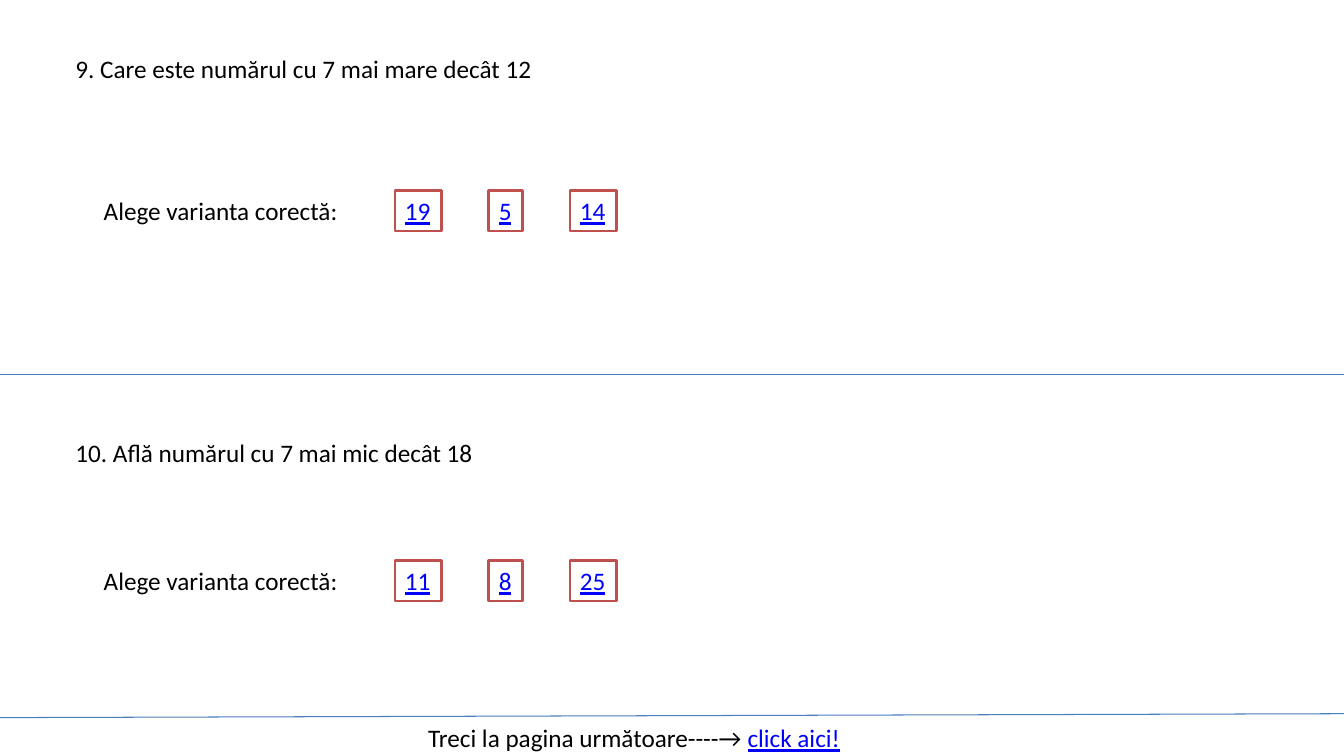
import pptx
import pptx.dml.color
import pptx.enum.shapes
import pptx.enum.text
import pptx.oxml.ns
import pptx.util
from lxml import etree

Pt = pptx.util.Pt
WIDTH, HEIGHT = 960, 540
LINE_HEIGHT = 29
BLACK, WHITE, BLUE, RED, RULE = "000000", "FFFFFF", "0000FF", "C0504D", "4B7EBC"


def color(hex_string):
    return pptx.dml.color.RGBColor.from_string(hex_string)


def write(shape, *runs):
    frame = shape.text_frame
    frame.word_wrap = False
    frame.auto_size = pptx.enum.text.MSO_AUTO_SIZE.SHAPE_TO_FIT_TEXT
    frame.vertical_anchor = pptx.enum.text.MSO_ANCHOR.TOP
    paragraph = frame.paragraphs[0]
    paragraph.alignment = pptx.enum.text.PP_ALIGN.LEFT
    for text, hex_string in runs:
        run = paragraph.add_run()
        run.text = text
        run.font.name = "Calibri"
        run.font.size = Pt(18)
        run.font.color.rgb = color(hex_string)
        run.font.underline = hex_string == BLUE


def add_label(slide, left, top, width, *runs):
    label = slide.shapes.add_textbox(Pt(left), Pt(top), Pt(width), Pt(LINE_HEIGHT))
    write(label, *runs)


def add_answer(slide, left, top, width, text):
    answer = slide.shapes.add_shape(
        pptx.enum.shapes.MSO_SHAPE.RECTANGLE, Pt(left), Pt(top), Pt(width), Pt(LINE_HEIGHT))
    answer.shadow.inherit = False
    answer.fill.solid()
    answer.fill.fore_color.rgb = color(WHITE)
    answer.line.color.rgb = color(RED)
    answer.line.width = Pt(2)
    write(answer, (text, BLUE))


def add_rule(slide, start, end):
    rule = slide.shapes.add_connector(
        pptx.enum.shapes.MSO_CONNECTOR.STRAIGHT, Pt(0), Pt(start), Pt(WIDTH), Pt(end))
    rule.line.color.rgb = color(RULE)
    rule.line.width = Pt(0.75)
    etree.SubElement(rule._element.spPr, pptx.oxml.ns.qn("a:effectLst"))


def add_question(slide, left, top, width, answers_offset, question, answers):
    add_label(slide, left, top, width, (question, BLACK))
    answers_top = top + answers_offset
    add_label(slide, left + 20.2, answers_top, 183.6, ("Alege varianta corectă:", BLACK))
    columns = ((235.4, 33.4), (302.4, 24), (360.4, 33.4))
    for (offset, answer_width), answer in zip(columns, answers):
        add_answer(slide, left + offset, answers_top, answer_width, answer)


def add_footer(slide, left, top, width):
    add_label(slide, left, top, width,
              ("Treci la pagina următoare----→ ", BLACK), ("click aici!", BLUE))


def main():
    presentation = pptx.Presentation()
    presentation.slide_width = Pt(WIDTH)
    presentation.slide_height = Pt(HEIGHT)
    slide = presentation.slides.add_slide(presentation.slide_layouts[6])
    add_rule(slide, 267.8, 267.8)
    add_rule(slide, 512.6, 509.8)
    add_question(slide, 46.8, 34.6, 344.2, 101.5,
                 "9. Care este numărul cu 7 mai mare decât 12", ("19", "5", "14"))
    add_question(slide, 46.8, 308.9, 301.7, 91.4,
                 "10. Află numărul cu 7 mai mic decât 18", ("11", "8", "25"))
    add_footer(slide, 298.8, 512.6, 313.2)
    presentation.save("out.pptx")


if __name__ == "__main__":
    main()
